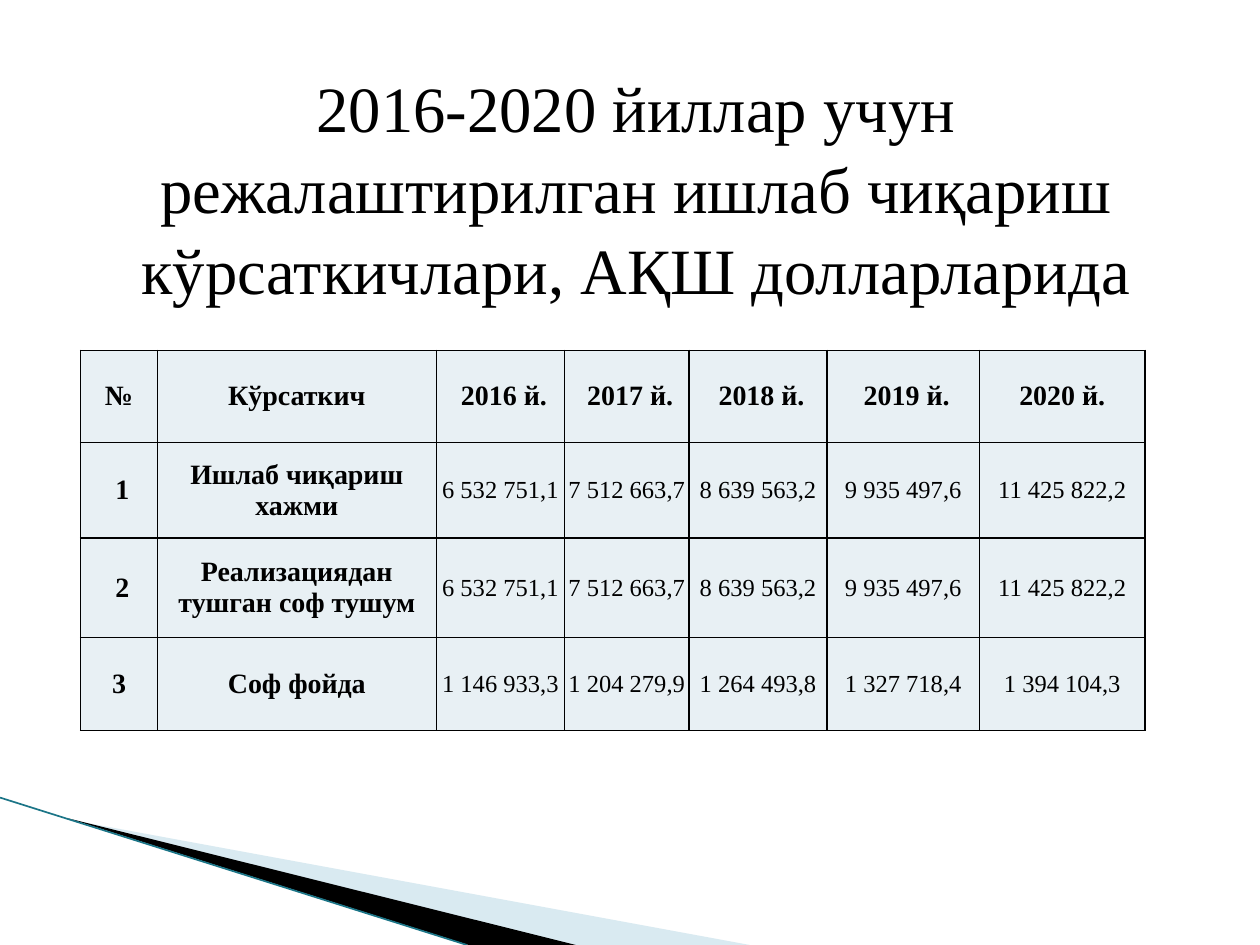
from collections import namedtuple

from lxml.etree import SubElement
from pptx import Presentation
from pptx.dml.color import RGBColor
from pptx.enum.shapes import MSO_CONNECTOR
from pptx.enum.text import MSO_ANCHOR, PP_ALIGN
from pptx.oxml.ns import qn
from pptx.util import Inches, Pt

Box = namedtuple("Box", "left top width height")
FONT = "Times New Roman"
BLACK = "000000"
CELL_FILL = "E8F0F4"
COLUMN_SHARES = [61, 222, 102, 99, 110, 121, 132]
ROW_SHARES = [73, 76, 79, 74]
ROWS = [
    ["№", "Кўрсаткич", " 2016 й.", " 2017 й.", " 2018 й.", " 2019 й.", "2020 й."],
    [" 1", "Ишлаб чиқариш хажми",
     "6 532 751,1", "7 512 663,7", "8 639 563,2", "9 935 497,6", "11 425 822,2"],
    [" 2", "Реализациядан тушган соф тушум",
     "6 532 751,1", "7 512 663,7", "8 639 563,2", "9 935 497,6", "11 425 822,2"],
    ["3", "Соф фойда",
     "1 146 933,3", "1 204 279,9", "1 264 493,8", "1 327 718,4", "1 394 104,3"],
]


def color(hex_string):
    """Turn a hex string into a colour."""
    return RGBColor.from_string(hex_string)


def percent_box(parent, left, top, width, height):
    """Return a box given in percent of its parent box."""
    return Box(
        int(parent.left + parent.width * left / 100),
        int(parent.top + parent.height * top / 100),
        int(parent.width * width / 100),
        int(parent.height * height / 100),
    )


def percent_point(box, across, down):
    """Return a point given in percent of a box."""
    return percent_box(box, across, down, 0, 0)[:2]


def write_text(text_frame, text, size, bold=False, line_spacing=None):
    """Write one centred paragraph into a text frame."""
    text_frame.word_wrap = True
    paragraph = text_frame.paragraphs[0]
    paragraph.alignment = PP_ALIGN.CENTER
    paragraph.line_spacing = line_spacing
    run = paragraph.add_run()
    run.text = text
    run.font.name = FONT
    run.font.size = Pt(size)
    run.font.bold = bold
    run.font.color.rgb = color(BLACK)


def add_facet(slide, box, points, fill, opacity=100):
    """Draw a filled polygon whose points are percents of the box."""
    start, *others = [percent_point(box, *point) for point in points]
    builder = slide.shapes.build_freeform(*start)
    builder.add_line_segments(others, close=True)
    shape = builder.convert_to_shape()
    shape.shadow.inherit = False
    shape.line.fill.background()
    shape.fill.solid()
    shape.fill.fore_color.rgb = color(fill)
    if opacity < 100:
        fill_element = shape.element.spPr.find(qn("a:solidFill"))
        SubElement(fill_element[0], qn("a:alpha"), val=str(opacity * 1000))


def add_corner(slide, box):
    """Draw the sloping wedge in the lower left corner."""
    add_facet(slide, box, [(9.2, 15), (100, 100), (76.6, 100)], "A0CBDC", opacity=40)
    add_facet(slide, box, [(9, 14), (76.8, 100), (62.5, 100)], BLACK)
    edge = slide.shapes.add_connector(
        MSO_CONNECTOR.STRAIGHT,
        *percent_point(box, 0, 0),
        *percent_point(box, 62.3, 100),
    )
    edge.line.color.rgb = color("1B7587")
    edge.line.width = Pt(0.95)
    SubElement(edge.element.spPr, qn("a:effectLst"))


def add_title(slide, box):
    """Place the slide title."""
    text_frame = slide.shapes.add_textbox(*box).text_frame
    text_frame.vertical_anchor = MSO_ANCHOR.MIDDLE
    title = "2016-2020 йиллар учун режалаштирилган ишлаб чиқариш кўрсаткичлари, АҚШ долларларида"
    write_text(text_frame, title, size=36.9, line_spacing=1.05)


def style_cell(cell, margin):
    """Set the margins, black borders and fill of a table cell."""
    cell.vertical_anchor = MSO_ANCHOR.MIDDLE
    cell.margin_left = cell.margin_right = Inches(margin)
    cell.margin_top = cell.margin_bottom = 0
    properties = cell._tc.get_or_add_tcPr()
    for side in ("lnL", "lnR", "lnT", "lnB"):
        border = SubElement(properties, qn(f"a:{side}"), w=str(Pt(1)))
        border_fill = SubElement(border, qn("a:solidFill"))
        SubElement(border_fill, qn("a:srgbClr"), val=BLACK)
    cell.fill.solid()
    cell.fill.fore_color.rgb = color(CELL_FILL)


def add_indicator_table(slide, box):
    """Place the table of planned indicators by year."""
    table = slide.shapes.add_table(len(ROWS), len(COLUMN_SHARES), *box).table
    for column, share in zip(table.columns, COLUMN_SHARES):
        column.width = int(box.width * share / sum(COLUMN_SHARES))
    for row, share in zip(table.rows, ROW_SHARES):
        row.height = int(box.height * share / sum(ROW_SHARES))
    for row_index, row in enumerate(ROWS):
        for column_index, text in enumerate(row):
            cell = table.cell(row_index, column_index)
            is_label = row_index == 0 or column_index < 2
            style_cell(cell, margin=0.07 if is_label else 0.01)
            write_text(cell.text_frame, text, size=16 if is_label else 14, bold=is_label)


def main():
    """Build and save the presentation."""
    presentation = Presentation()
    presentation.slide_width = Inches(10)
    presentation.slide_height = Inches(7.5)
    slide = presentation.slides.add_slide(presentation.slide_layouts[6])
    page = Box(0, 0, presentation.slide_width, presentation.slide_height)
    add_corner(slide, percent_box(page, 0, 84.4, 59.5, 15.6))
    add_title(slide, percent_box(page, 5.5, 11.33, 90, 16.67))
    add_indicator_table(slide, percent_box(page, 6.4, 37.07, 84.5, 40.27))
    presentation.save("out.pptx")


if __name__ == "__main__":
    main()
